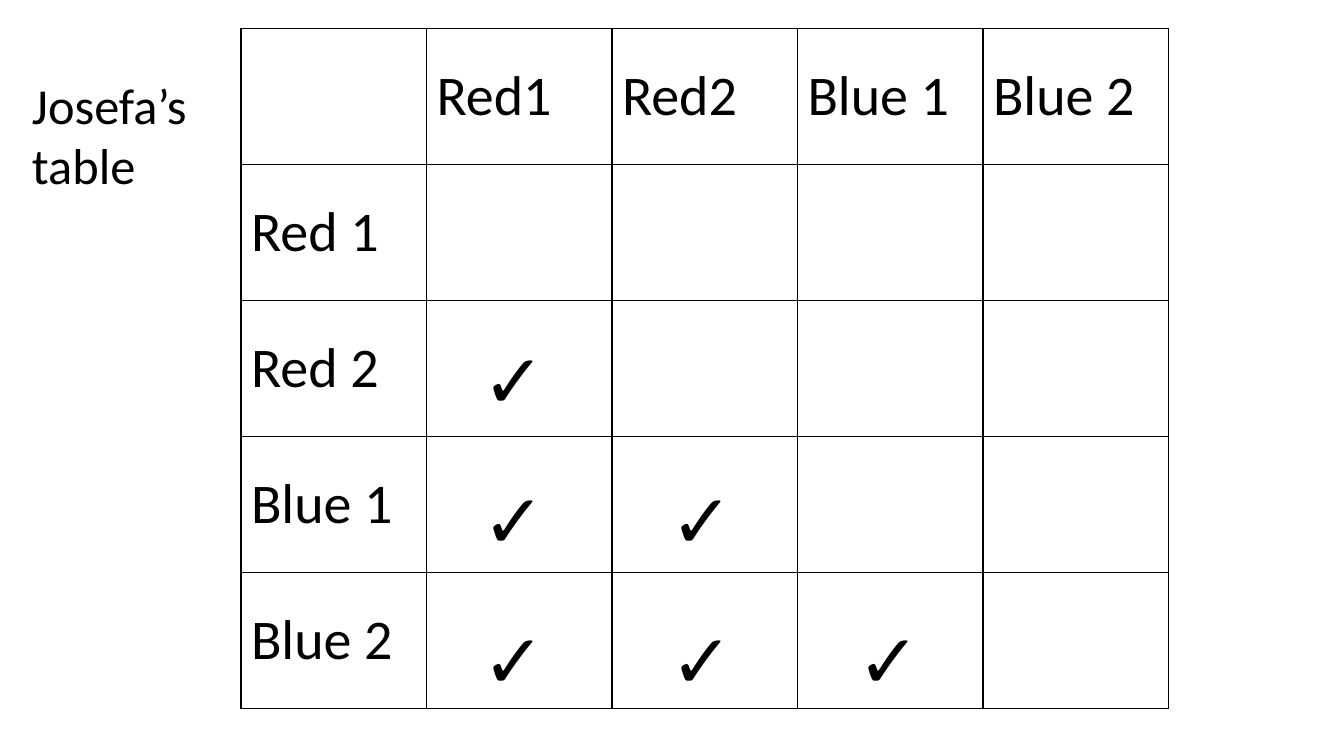
from dataclasses import dataclass
from lxml.etree import SubElement
from pptx import Presentation
from pptx.dml.color import RGBColor as RGB
from pptx.enum.text import MSO_ANCHOR as Anchor, MSO_AUTO_SIZE as Fit, PP_ALIGN as Align
from pptx.oxml.ns import qn
from pptx.util import Inches, Pt


@dataclass(frozen=True)
class Theme:
    font: str = "Calibri"
    ink: str = "000000"
    paper: str = "FFFFFF"
    label: int = 36
    head: int = 40
    tick: int = 54
    rule: int = 1


@dataclass(frozen=True)
class Grid:
    left: float = 2.39
    top: float = 0.28
    col: float = 1.84
    row: float = 1.35

    def place(self, col, row, wide, high):
        """Turn columns and rows, counted from the table's corner, into lengths."""
        return (Inches(self.left + col * self.col), Inches(self.top + row * self.row),
                Inches(wide * self.col), Inches(high * self.row))


class Board:
    def __init__(self, slide, theme, grid):
        self.slide, self.theme, self.grid = slide, theme, grid

    def style(self, frame, size, align=Align.LEFT):
        for para in frame.paragraphs:
            para.alignment = align
            for run in para.runs:
                font = run.font
                font.name, font.size, font.bold = self.theme.font, Pt(size), False
                font.color.rgb = RGB.from_string(self.theme.ink)

    def text(self, words, spot, size, align=Align.LEFT):
        frame = self.slide.shapes.add_textbox(*self.grid.place(*spot)).text_frame
        frame.word_wrap = True
        frame.auto_size = Fit.SHAPE_TO_FIT_TEXT
        frame.text = words
        self.style(frame, size, align)

    def border(self, cell):
        props = cell._tc.get_or_add_tcPr()
        for side in ("lnL", "lnR", "lnT", "lnB"):
            line = SubElement(props, qn(f"a:{side}"), w=str(Pt(self.theme.rule)))
            fill = SubElement(line, qn("a:solidFill"))
            SubElement(fill, qn("a:srgbClr"), val=self.theme.ink)

    def table(self, heads, sides):
        cols, rows = len(heads) + 1, len(sides) + 1
        spot = self.grid.place(0, 0, cols, rows)
        table = self.slide.shapes.add_table(rows, cols, *spot).table
        table.first_row = table.horz_banding = False
        for col in table.columns:
            col.width = Inches(self.grid.col)
        for row in table.rows:
            row.height = Inches(self.grid.row)
        for cell in table.iter_cells():
            self.border(cell)
            cell.fill.solid()
            cell.fill.fore_color.rgb = RGB.from_string(self.theme.paper)
            cell.vertical_anchor = Anchor.MIDDLE
        for i, head in enumerate(heads, 1):
            table.cell(0, i).text = head
        for i, side in enumerate(sides, 1):
            table.cell(i, 0).text = side
        for cell in table.iter_cells():
            self.style(cell.text_frame, self.theme.head)

    def ticks(self, count):
        """Tick each pair below the diagonal, leaving out the first side row."""
        for col in range(count - 1):
            for row in range(col, count - 1):
                spot = (1.2 + 1.01 * col, 2.2 + 1.03 * row, 0.55, 0.75)
                self.text("✓", spot, self.theme.tick, Align.CENTER)


def main():
    deck = Presentation()
    deck.slide_width, deck.slide_height = Inches(13.33), Inches(7.5)
    slide = deck.slides.add_slide(deck.slide_layouts[6])
    theme = Theme()
    board = Board(slide, theme, Grid())
    sides = ["Red 1", "Red 2", "Blue 1", "Blue 2"]
    board.table(["Red1", "Red2", "Blue 1", "Blue 2"], sides)
    board.ticks(len(sides))
    board.text("Josefa’s table", (-1.18, 0.3, 1.45, 0.97), theme.label)
    deck.save("out.pptx")


if __name__ == "__main__":
    main()
